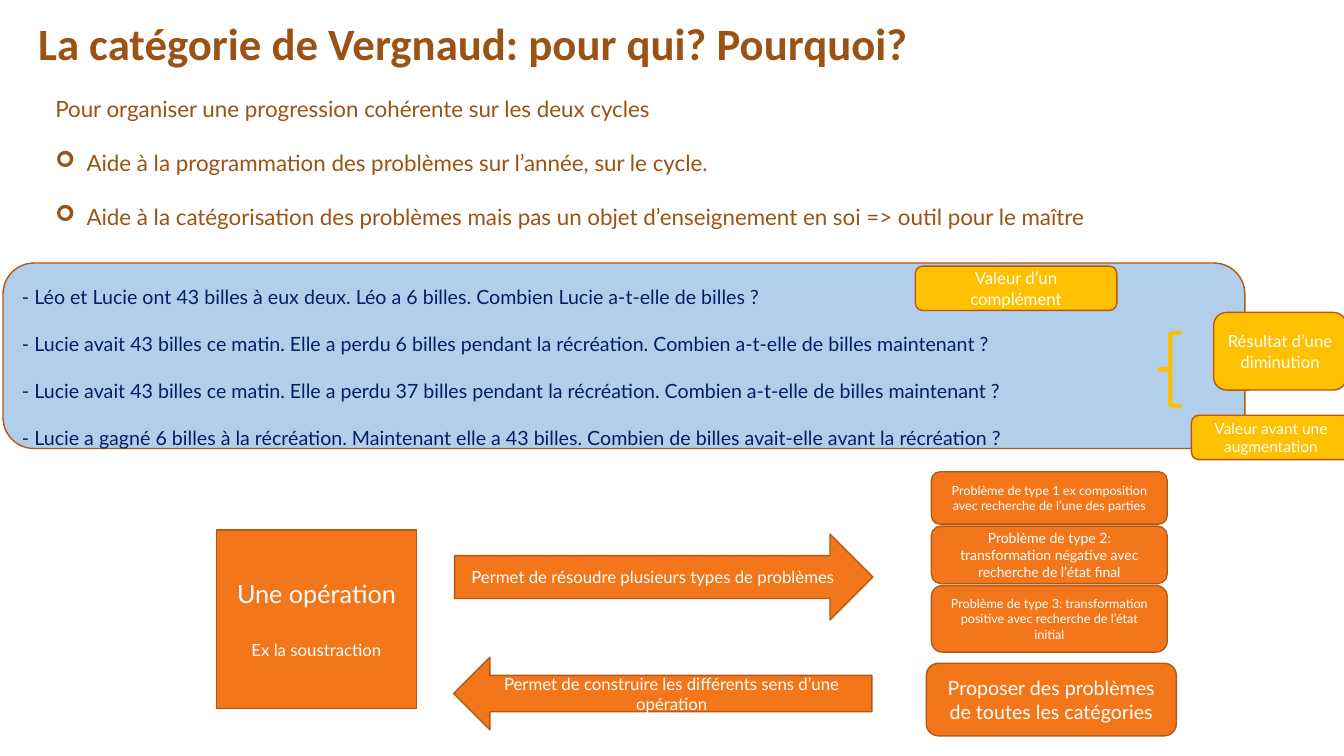
import lxml.etree
import pptx
import pptx.dml.color
import pptx.enum.shapes
import pptx.enum.text
import pptx.oxml.ns
import pptx.util

RGB = pptx.dml.color.RGBColor
BROWN = RGB(0x9A, 0x53, 0x15)
OUTLINE = RGB(0xB4, 0x58, 0x13)
ORANGE = RGB(0xF3, 0x77, 0x1A)
GOLD = RGB(0xFF, 0xC0, 0x00)
BLUE = RGB(0x5B, 0x9B, 0xD5)
NAVY = RGB(0x00, 0x20, 0x60)
WHITE = RGB(0xFF, 0xFF, 0xFF)

WIDTH, HEIGHT = pptx.util.Inches(13.33), pptx.util.Inches(7.5)
COLUMNS, ROWS = 160, 90
FORMS = pptx.enum.shapes.MSO_SHAPE
CENTER = pptx.enum.text.PP_ALIGN.CENTER
LEFT = pptx.enum.text.PP_ALIGN.LEFT


def cells(left, top, width, height):
    """Convert grid columns and rows to slide lengths."""
    return (round(left * WIDTH / COLUMNS), round(top * HEIGHT / ROWS),
            round(width * WIDTH / COLUMNS), round(height * HEIGHT / ROWS))


def within(box, left, top, width, height):
    """Shift a part by the corner of its region."""
    return box[0] + left, box[1] + top, width, height


def add_element(parent, tag, **attributes):
    """Append a DrawingML element."""
    return lxml.etree.SubElement(parent, pptx.oxml.ns.qn(tag), attributes)


def write(frame, lines, size, color, align=LEFT, font="Lato"):
    """Fill a text frame with evenly formatted paragraphs."""
    frame.word_wrap = True
    frame.text = "\n".join(lines)
    for paragraph in frame.paragraphs:
        paragraph.alignment = align
        for run in paragraph.runs:
            run.font.name = font
            run.font.size = pptx.util.Pt(size)
            run.font.color.rgb = color


def add_block(slide, box, form, fill, lines, size, color=WHITE, align=CENTER):
    """Add an outlined, filled shape with text in its middle."""
    block = slide.shapes.add_shape(form, *cells(*box))
    block.shadow.inherit = False
    block.fill.solid()
    block.fill.fore_color.rgb = fill
    block.line.color.rgb = OUTLINE
    block.line.width = pptx.util.Pt(1)
    write(block.text_frame, lines, size, color, align)
    block.text_frame.vertical_anchor = pptx.enum.text.MSO_ANCHOR.MIDDLE
    return block


def add_title(slide, box):
    """Add the slide's heading."""
    title = slide.shapes.add_textbox(*cells(*box))
    write(title.text_frame, ["La catégorie de Vergnaud: pour qui? Pourquoi?"],
          32, BROWN, font="Calibri")
    title.text_frame.paragraphs[0].runs[0].font.bold = True


def add_goals(slide, box):
    """Add the purpose and its two bulleted benefits."""
    goals = slide.shapes.add_textbox(*cells(*box))
    write(goals.text_frame, [
        "Pour organiser une progression cohérente sur les deux cycles",
        "Aide à la programmation des problèmes sur l’année, sur le cycle.",
        "Aide à la catégorisation des problèmes mais pas un objet "
        "d’enseignement en soi => outil pour le maître",
    ], 16, BROWN)
    indent = pptx.util.Inches(0.31)
    for benefit in goals.text_frame.paragraphs[1:]:
        benefit.space_before = pptx.util.Pt(19.5)
        properties = benefit._p.get_or_add_pPr()
        properties.set("marL", str(indent))
        properties.set("indent", str(-indent))
        add_element(properties, "a:buFont", typeface="Wingdings")
        add_element(properties, "a:buChar", char="➢")


def add_problems(slide, box):
    """Add the panel of example problems with its category tags."""
    panel = add_block(slide, box, FORMS.ROUNDED_RECTANGLE, BLUE, [
        "- Léo et Lucie ont 43 billes à eux deux. Léo a 6 billes. "
        "Combien Lucie a-t-elle de billes ?",
        "- Lucie avait 43 billes ce matin. Elle a perdu 6 billes pendant "
        "la récréation. Combien a-t-elle de billes maintenant ?",
        "- Lucie avait 43 billes ce matin. Elle a perdu 37 billes pendant "
        "la récréation. Combien a-t-elle de billes maintenant ?",
        "- Lucie a gagné 6 billes à la récréation. Maintenant elle a 43 "
        "billes. Combien de billes avait-elle avant la récréation ?",
    ], 14, NAVY, LEFT)
    for problem in panel.text_frame.paragraphs:
        problem.line_spacing = 2.0
    tint = panel.fill._xPr.find(".//" + pptx.oxml.ns.qn("a:srgbClr"))
    add_element(tint, "a:alpha", val="47000")

    for place, lines, size in (
        ((108.6, 0.36, 24, 5.28), ["Valeur d’un complément"], 12),
        ((141.48, 18.12, 18.96, 5.28), ["Valeur avant une augmentation"], 11),
        ((144.12, 5.88, 15.84, 9.24), ["Résultat d’une", "diminution"], 12),
    ):
        add_block(slide, within(box, *place), FORMS.ROUNDED_RECTANGLE, GOLD, lines, size)

    brace = slide.shapes.add_shape(
        FORMS.LEFT_BRACE, *cells(*within(box, 137.64, 8.28, 2.64, 8.76)))
    brace.shadow.inherit = False
    brace.fill.background()
    brace.line.color.rgb = GOLD
    brace.line.width = pptx.util.Pt(3)


def add_operation_diagram(slide, box):
    """Add the operation, the problem types and the arrows between them."""
    operation = add_block(slide, within(box, 0, 6.96, 23.76, 21.24), FORMS.RECTANGLE,
                          ORANGE, ["Une opération", "Ex la soustraction"], 18)
    example = operation.text_frame.paragraphs[1]
    example.space_before = pptx.util.Pt(22)
    example.runs[0].font.size = pptx.util.Pt(12)

    for place, form, label in (
        ((28.32, 7.44, 49.8, 10.2), FORMS.RIGHT_ARROW,
         "Permet de résoudre plusieurs types de problèmes"),
        ((28.2, 22.08, 49.8, 8.64), FORMS.LEFT_ARROW,
         "Permet de construire les différents sens d’une opération"),
    ):
        add_block(slide, within(box, *place), form, ORANGE, [label], 12)

    top = 0
    for height, size, label in (
        (6.24, 9, "Problème de type 1 ex composition avec recherche de l’une des parties"),
        (6.84, 10, "Problème de type 2: transformation négative avec recherche de l’état final"),
        (7.92, 9, "Problème de type 3: transformation positive avec recherche de l’état initial"),
    ):
        add_block(slide, within(box, 85.08, top, 28.08, height),
                  FORMS.ROUNDED_RECTANGLE, ORANGE, [label], size)
        top += height + 0.24
    add_block(slide, within(box, 84.48, 22.8, 29.76, 8.64), FORMS.ROUNDED_RECTANGLE,
              ORANGE, ["Proposer des problèmes de toutes les catégories"], 14)


def main():
    """Build and save the slide."""
    deck = pptx.Presentation()
    deck.slide_width, deck.slide_height = WIDTH, HEIGHT
    slide = deck.slides.add_slide(deck.slide_layouts[6])
    add_title(slide, (3.36, 1.32, 144.84, 14.16))
    add_problems(slide, (0.36, 31.32, 147.84, 22.08))
    add_goals(slide, (5.4, 10.68, 150.24, 23.16))
    add_operation_diagram(slide, (25.8, 56.16, 114.24, 31.44))
    deck.save("out.pptx")


if __name__ == "__main__":
    main()
